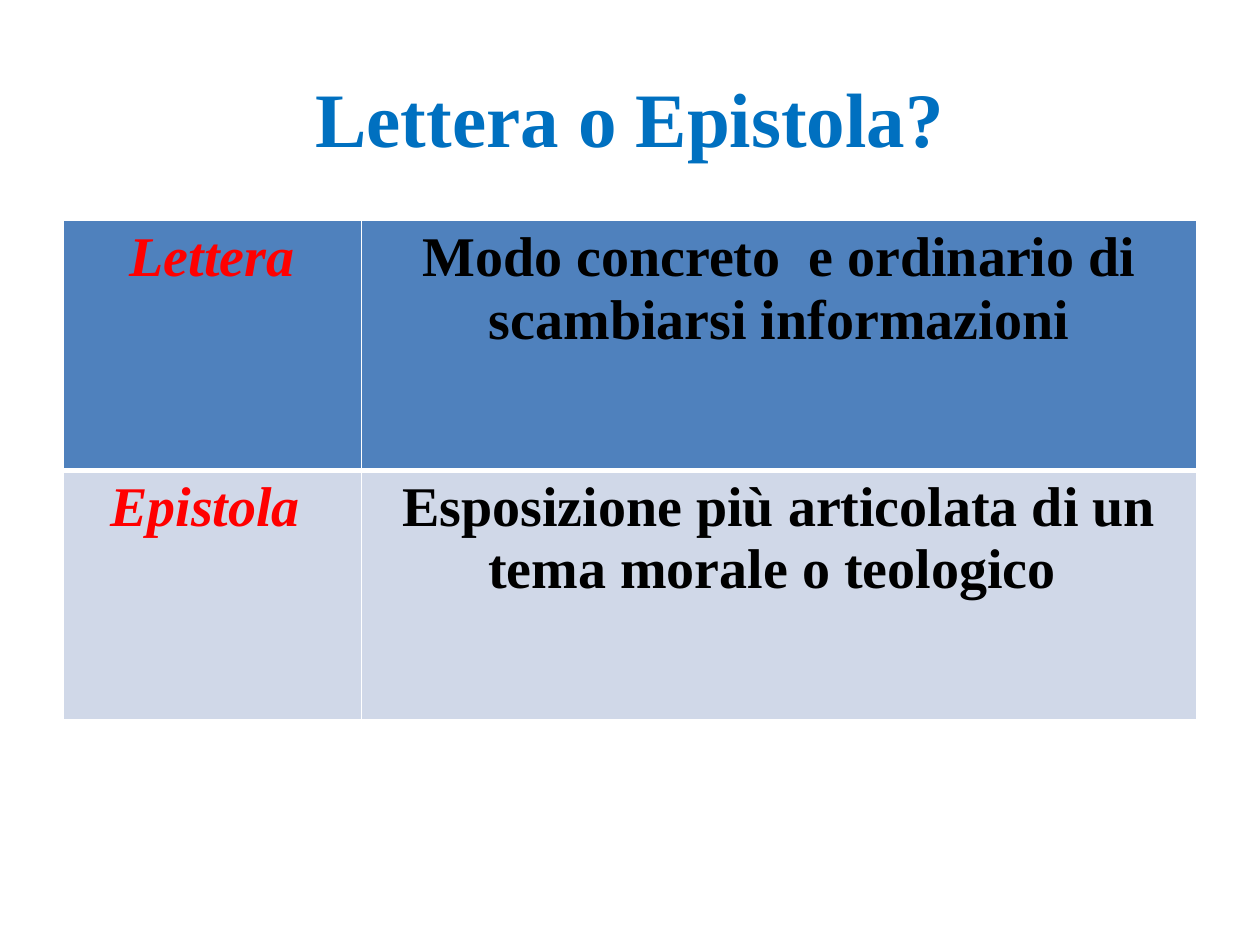
from dataclasses import dataclass

from lxml.etree import SubElement
from pptx import Presentation
from pptx.dml.color import RGBColor
from pptx.enum.text import MSO_ANCHOR, PP_ALIGN
from pptx.oxml.ns import qn
from pptx.util import Pt

COLORS = {
    "title": "0070C0",
    "term": "FF0000",
    "definition": "000000",
    "header": "4F81BD",
    "body": "D0D8E8",
    "border": "FFFFFF",
}
FONT = "Times New Roman"
COLUMN_WIDTHS = (170.64, 477.36)
ROW_HEIGHT = 142.8


@dataclass
class Entry:
    term: str
    definition: str
    fill: str
    top_border: float
    bottom_border: float


ENTRIES = [
    Entry("Lettera", "Modo concreto  e ordinario di scambiarsi informazioni", "header", 1, 3),
    Entry("Epistola ", "Esposizione più articolata di un tema morale o teologico ", "body", 3, 1),
]


def write_text(frame, text: str, color: str, size: float, italic: bool = False) -> None:
    para = frame.paragraphs[0]
    para.alignment = PP_ALIGN.CENTER
    span = para.add_run()
    span.text = text
    formats = {"name": FONT, "size": Pt(size), "bold": True, "italic": italic}
    for name, value in formats.items():
        setattr(span.font, name, value)
    span.font.color.rgb = RGBColor.from_string(COLORS[color])


def set_borders(cell, widths: dict[str, float]) -> None:
    """Draw solid borders, which the schema wants ahead of the cell fill."""
    properties = cell._tc.get_or_add_tcPr()
    for position, (side, width) in enumerate(widths.items()):
        line = SubElement(properties, qn(f"a:ln{side}"), w=str(int(Pt(width))))
        fill = SubElement(line, qn("a:solidFill"))
        SubElement(fill, qn("a:srgbClr"), val=COLORS["border"])
        properties.insert(position, line)


def add_title(page, text: str) -> None:
    title = page.shapes.title
    place = {"left": 36, "top": 21.6, "width": 648, "height": 90}
    for name, value in place.items():
        setattr(title, name, Pt(value))
    title.text_frame.vertical_anchor = MSO_ANCHOR.MIDDLE
    write_text(title.text_frame, text, "title", 44)


def add_definitions(page, entries: list[Entry]) -> None:
    table = page.shapes.add_table(
        len(entries), len(COLUMN_WIDTHS), Pt(36), Pt(126),
        Pt(sum(COLUMN_WIDTHS)), Pt(ROW_HEIGHT * len(entries)),
    ).table
    for column, width in zip(table.columns, COLUMN_WIDTHS):
        column.width = Pt(width)
    for row, entry in zip(table.rows, entries):
        row.height = Pt(ROW_HEIGHT)
        term, definition = row.cells
        write_text(term.text_frame, entry.term, "term", 32, italic=True)
        write_text(definition.text_frame, entry.definition, "definition", 32)
        for cell in (term, definition):
            cell.fill.solid()
            cell.fill.fore_color.rgb = RGBColor.from_string(COLORS[entry.fill])
            set_borders(cell, {"L": 1, "R": 1, "T": entry.top_border, "B": entry.bottom_border})


def main() -> None:
    deck = Presentation()
    deck.slide_width, deck.slide_height = Pt(720), Pt(540)
    page = deck.slides.add_slide(deck.slide_layouts.get_by_name("Title Only"))
    add_title(page, "Lettera o Epistola?")
    add_definitions(page, ENTRIES)
    deck.save("out.pptx")


if __name__ == "__main__":
    main()
